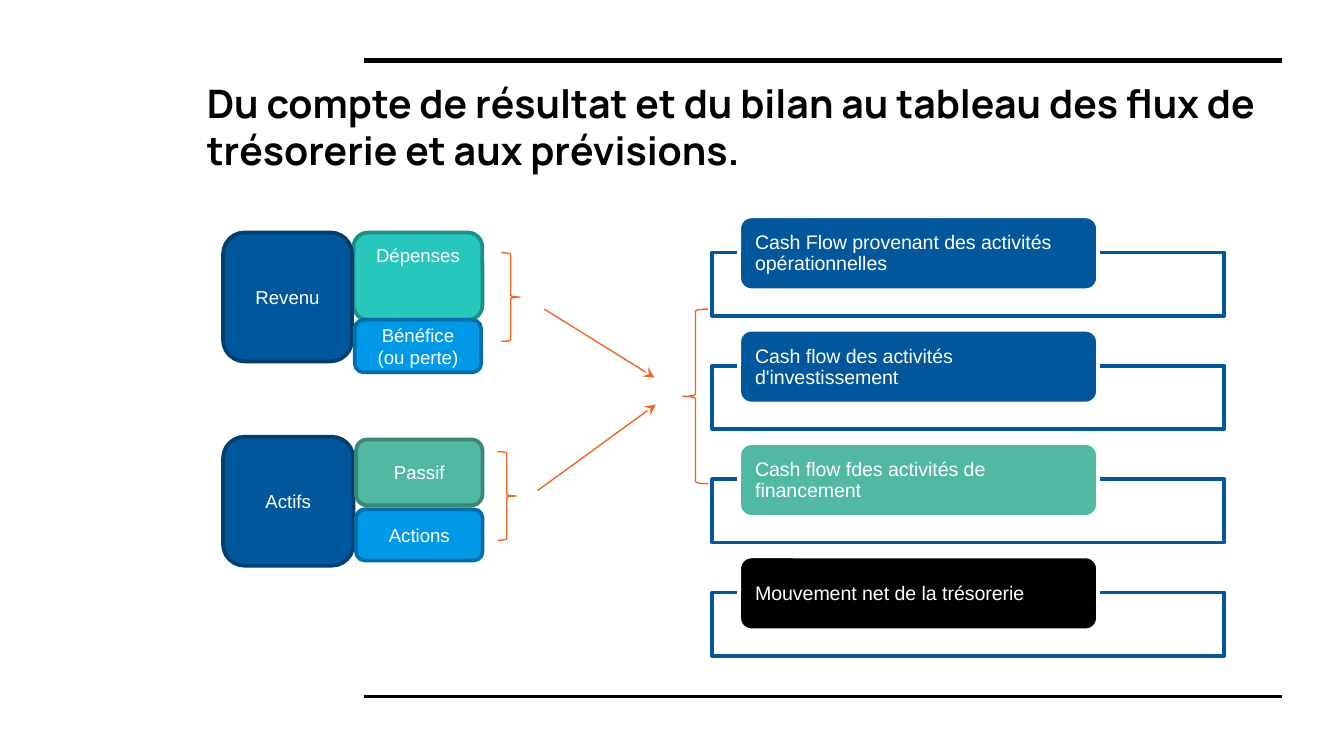
import pptx
import pptx.util
import pptx.dml.color
import pptx.enum.shapes
import pptx.enum.text
import pptx.oxml.ns
from lxml import etree

Inches = pptx.util.Inches
Pt = pptx.util.Pt
MSO_SHAPE = pptx.enum.shapes.MSO_SHAPE
ANCHOR = pptx.enum.text.MSO_ANCHOR
ALIGN = pptx.enum.text.PP_ALIGN
qn = pptx.oxml.ns.qn

COLORS = {
    "black": "000000",
    "white": "FFFFFF",
    "orange": "F46524",
    "navy": "01579B",
    "navy_edge": "003F71",
    "turquoise": "27C7BD",
    "turquoise_edge": "1C9189",
    "sky": "0099E8",
    "sky_edge": "006FA9",
    "green": "51B9A3",
    "green_edge": "3B8776",
    "blue": "00579B",
}


def rgb(name):
    return pptx.dml.color.RGBColor.from_string(COLORS[name])


def set_text(sp, text, size, color, font="Arial", align=ALIGN.LEFT,
             anchor=ANCHOR.MIDDLE, inset_y=0.05, spacing=None, bold=False):
    tf = sp.text_frame
    tf.word_wrap = True
    tf.vertical_anchor = anchor
    tf.margin_left = tf.margin_right = Inches(0.1)
    tf.margin_top = tf.margin_bottom = Inches(inset_y)
    p = tf.paragraphs[0]
    p.text = text
    p.alignment = align
    p.line_spacing = spacing
    p.font.name = font
    p.font.size = Pt(size)
    p.font.bold = bold
    p.font.color.rgb = rgb(color)


def add_text(s, text, box, size, color, **options):
    sp = s.shapes.add_textbox(*map(Inches, box))
    set_text(sp, text, size, color, **options)


def add_shape(s, kind, box, fill, line, width):
    sp = s.shapes.add_shape(kind, *map(Inches, box))
    sp.shadow.inherit = False
    if fill:
        sp.fill.solid()
        sp.fill.fore_color.rgb = rgb(fill)
    else:
        sp.fill.background()
    sp.line.color.rgb = rgb(line)
    sp.line.width = Pt(width)
    return sp


def add_block(s, text, box, color, anchor=ANCHOR.MIDDLE):
    sp = add_shape(s, MSO_SHAPE.ROUNDED_RECTANGLE, box, color, color + "_edge", 2)
    set_text(sp, text, 10, "white", align=ALIGN.CENTER, anchor=anchor)


def add_brace(s, box, rotation=0):
    sp = add_shape(s, MSO_SHAPE.LEFT_BRACE, box, None, "orange", 0.75)
    sp.rotation = rotation


def add_line(s, start, end, color, width, arrow=False):
    cx = s.shapes.add_connector(pptx.enum.shapes.MSO_CONNECTOR.STRAIGHT,
                                *map(Inches, start + end))
    cx.line.color.rgb = rgb(color)
    cx.line.width = Pt(width)
    if arrow:
        etree.SubElement(cx.line._get_or_add_ln(), qn("a:tailEnd"), type="stealth")
    etree.SubElement(cx._element.spPr, qn("a:effectLst"))


def add_cash_flow(s, text, top, color):
    frame = add_shape(s, MSO_SHAPE.RECTANGLE, (5.3, top + 0.27, 3.81, 0.47),
                      "white", "blue", 2)
    clr = frame._element.spPr.find(qn("a:solidFill"))[0]
    etree.SubElement(clr, qn("a:alpha"), val="89000")
    add_shape(s, MSO_SHAPE.ROUNDED_RECTANGLE, (5.5, top, 2.67, 0.55),
              color, "white", 2)
    add_text(s, text, (5.52, top + 0.03, 2.62, 0.5), 10.5, "white",
             inset_y=0, spacing=0.9)


def main():
    prs = pptx.Presentation()
    prs.slide_width = Inches(10)
    prs.slide_height = Inches(10) * 9 // 16
    s = prs.slides.add_slide(prs.slide_layouts[6])

    for y, width in ((0.45, 3), (5.18, 1.5)):
        add_line(s, (2.71, y), (9.54, y), "black", width)
    add_text(s, "Du compte de résultat et du bilan au tableau des flux de "
                "trésorerie et aux prévisions.",
             (1.44, 0.49, 8.55, 0.7), 21, "black", font="Manrope",
             anchor=ANCHOR.TOP, inset_y=0.1, bold=True)

    add_block(s, "Dépenses", (2.63, 1.73, 0.96, 0.65), "turquoise", ANCHOR.TOP)
    for text, box, color in (
        ("Revenu", (1.66, 1.73, 0.96, 0.96), "navy"),
        ("Bénéfice (ou perte)", (2.64, 2.38, 0.94, 0.39), "sky"),
        ("Actifs", (1.66, 3.25, 0.97, 0.96), "navy"),
        ("Actions", (2.65, 3.79, 0.94, 0.38), "sky"),
        ("Passif", (2.65, 3.27, 0.94, 0.49), "green"),
    ):
        add_block(s, text, box, color)

    for start, end in (((4.05, 2.3), (4.87, 2.81)), ((4, 3.65), (4.88, 3.01))):
        add_line(s, start, end, "orange", 0.75, arrow=True)

    cash_flows = (
        ("Cash Flow provenant des activités opérationnelles", "blue"),
        ("Cash flow des activités d'investissement", "blue"),
        ("Cash flow fdes activités de financement", "green"),
        ("Mouvement net de la trésorerie", "black"),
    )
    pitch = 2.53 / 3
    for i, (text, color) in enumerate(cash_flows):
        add_cash_flow(s, text, 1.61 + i * pitch, color)

    add_brace(s, (3.73, 1.88, 0.14, 0.66), 180)
    add_brace(s, (3.7, 3.36, 0.14, 0.66), 180)
    add_brace(s, (5.08, 2.3, 0.19, 1.3))

    prs.save("out.pptx")


if __name__ == "__main__":
    main()
